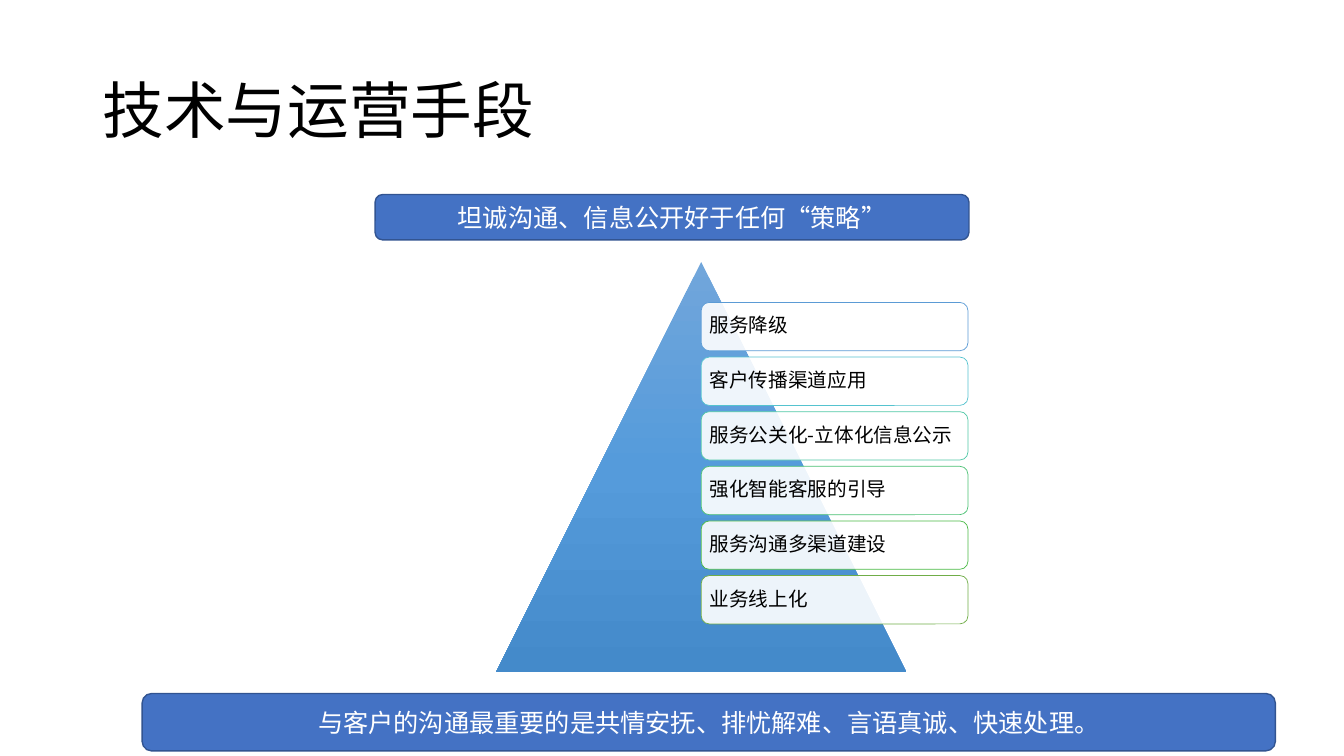
import copy

import pptx
import pptx.dml.color
import pptx.enum.shapes
import pptx.enum.text
import pptx.oxml.ns
import pptx.util
from lxml import etree

Inches, Pt = pptx.util.Inches, pptx.util.Pt
RGB = pptx.dml.color.RGBColor.from_string
SHAPE = pptx.enum.shapes.MSO_SHAPE
ALIGN = pptx.enum.text.PP_ALIGN
qn = pptx.oxml.ns.qn

THEME = {
    "font": "Noto Sans CJK SC",
    "title_size": 44, "banner_size": 18, "step_size": 14,
    "ink": "000000", "paper": "FFFFFF",
    "banner": "4472C4", "banner_edge": "325491",
    "pyramid": [(0, "71A6DB"), (0.5, "559BDB"), (1, "448ACA")],
}


def write(shape, text, size, color, align=ALIGN.LEFT, spacing=1.0):
    """Fill a shape with one vertically centred paragraph."""
    frame = shape.text_frame
    frame.word_wrap = True
    frame.vertical_anchor = pptx.enum.text.MSO_ANCHOR.MIDDLE
    paragraph = frame.paragraphs[0]
    paragraph.text = text
    paragraph.alignment = align
    paragraph.line_spacing = spacing
    font = paragraph.font
    font.name, font.size, font.color.rgb = THEME["font"], Pt(size), RGB(color)
    east_asian = etree.SubElement(paragraph._p.pPr.find(qn("a:defRPr")), qn("a:ea"))
    east_asian.set("typeface", THEME["font"])


def add_box(left, top, width, height, fill, edge, edge_width):
    """Add a rounded box without shadow."""
    box = slide.shapes.add_shape(SHAPE.ROUNDED_RECTANGLE, Inches(left), Inches(top),
                                 Inches(width), Inches(height))
    box.shadow.inherit = False
    box.fill.solid()
    box.fill.fore_color.rgb = RGB(fill)
    box.line.color.rgb = RGB(edge)
    box.line.width = Pt(edge_width)
    return box


deck = pptx.Presentation()
deck.slide_width, deck.slide_height = Inches(13.33), Inches(7.5)
slide = deck.slides.add_slide(deck.slide_layouts[6])

# Title
title = slide.shapes.add_textbox(Inches(0.92), Inches(0.4), Inches(11.5), Inches(1.45))
write(title, "技术与运营手段", THEME["title_size"], THEME["ink"], spacing=0.9)

# Pyramid with a three-stop gradient running downwards
PYRAMID_LEFT, PYRAMID_TOP, PYRAMID_SIDE = 4.92, 2.6, 4.07
pyramid = slide.shapes.add_shape(SHAPE.ISOSCELES_TRIANGLE, Inches(PYRAMID_LEFT),
                                 Inches(PYRAMID_TOP), Inches(PYRAMID_SIDE),
                                 Inches(PYRAMID_SIDE))
pyramid.shadow.inherit = False
pyramid.line.fill.background()
pyramid.fill.gradient()
pyramid.fill.gradient_angle = 270
stop_list = pyramid._element.spPr.find(qn("a:gradFill")).find(qn("a:gsLst"))
stop_list.append(copy.deepcopy(stop_list[-1]))
for stop, (position, color) in zip(pyramid.fill.gradient_stops, THEME["pyramid"]):
    stop.position = position
    stop.color.rgb = RGB(color)

# Steps, stacked from the pyramid's axis to the right
steps = [
    ("服务降级", "5B9BD5"),
    ("客户传播渠道应用", "55C3CF"),
    ("服务公关化-立体化信息公示", "50C8A7"),
    ("强化智能客服的引导", "4BC174"),
    ("服务沟通多渠道建设", "4ABA46"),
    ("业务线上化", "70AD47"),
]
STEP_TOP, STEP_PITCH, STEP_HEIGHT = 3.0, 0.542, 0.48
STEP_WIDTH = PYRAMID_SIDE * 0.65
for row, (text, edge) in enumerate(steps):
    step = add_box(PYRAMID_LEFT + PYRAMID_SIDE / 2, STEP_TOP + row * STEP_PITCH,
                   STEP_WIDTH, STEP_HEIGHT, THEME["paper"], edge, 0.5)
    fill_color = step._element.spPr.find(qn("a:solidFill"))[0]
    etree.SubElement(fill_color, qn("a:alpha")).set("val", "90000")
    write(step, text, THEME["step_size"], THEME["ink"], spacing=0.9)
    frame = step.text_frame
    frame.margin_left = frame.margin_right = Inches(0.06)
    frame.margin_top = frame.margin_bottom = Inches(0.06)

# Banners above and below the pyramid
banners = [
    ("坦诚沟通、信息公开好于任何“策略”", 3.72, 1.93, 5.89, 0.45),
    ("与客户的沟通最重要的是共情安抚、排忧解难、言语真诚、快速处理。", 1.41, 6.88, 11.24, 0.57),
]
for text, *place in banners:
    banner = add_box(*place, THEME["banner"], THEME["banner_edge"], 1)
    write(banner, text, THEME["banner_size"], THEME["paper"], ALIGN.CENTER)

deck.save("out.pptx")
